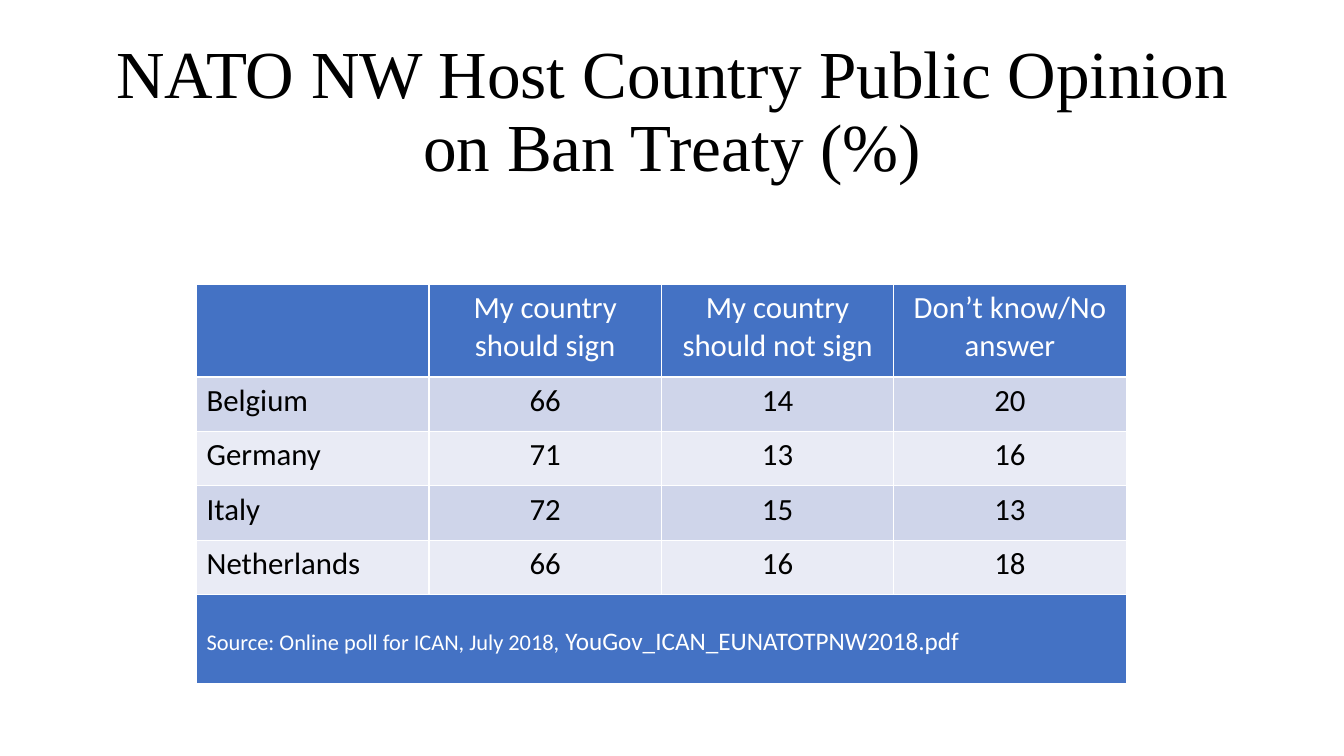
from lxml.etree import SubElement
from pptx import Presentation
from pptx.dml.color import RGBColor
from pptx.enum.text import MSO_ANCHOR, PP_ALIGN
from pptx.oxml.ns import qn
from pptx.util import Inches, Pt

BLUE, WHITE, BLACK = "4472C4", "FFFFFF", "000000"
BANDS = ["CFD5EA", "E9EBF5"]
HEADINGS = ["", "My country should sign", "My country should not sign", "Don’t know/No answer"]
OPINIONS = [
    ("Belgium", 66, 14, 20),
    ("Germany", 71, 13, 16),
    ("Italy", 72, 15, 13),
    ("Netherlands", 66, 16, 18),
]
SOURCE = [("Source: Online poll for ICAN, July 2018,", 16), (" YouGov_ICAN_EUNATOTPNW2018.pdf", 18)]


def rgb(value):
    return RGBColor.from_string(value)


def write_text(frame, runs, font="Calibri", color=BLACK, align=PP_ALIGN.LEFT, spacing=1.0):
    frame.word_wrap = True
    paragraph = frame.paragraphs[0]
    paragraph.alignment = align
    paragraph.line_spacing = spacing
    for words, size in runs:
        run = paragraph.add_run()
        run.text = words
        run.font.name = font
        run.font.size = Pt(size)
        run.font.bold = False
        run.font.color.rgb = rgb(color)


def style_cell(cell, fill):
    properties = cell._tc.get_or_add_tcPr()
    for side in ("a:lnL", "a:lnR", "a:lnT", "a:lnB"):
        border = SubElement(properties, qn(side), w=str(Pt(1)))
        solid = SubElement(border, qn("a:solidFill"))
        SubElement(solid, qn("a:srgbClr"), val=WHITE)
    cell.fill.solid()
    cell.fill.fore_color.rgb = rgb(fill)


def add_title(slide, left, top, width, height):
    title = slide.shapes.add_textbox(Inches(left), Inches(top), Inches(width), Inches(height))
    title.text_frame.vertical_anchor = MSO_ANCHOR.MIDDLE
    write_text(title.text_frame, [("NATO NW Host Country Public Opinion on Ban Treaty (%)", 48)],
               font="Times New Roman", align=PP_ALIGN.CENTER, spacing=0.9)


def add_opinion_table(slide, left, top, width, height):
    rows = [HEADINGS, *OPINIONS]
    header_height, source_height = 0.92, 0.88
    band_height = (height - header_height - source_height) / len(OPINIONS)
    heights = [header_height] + [band_height] * len(OPINIONS) + [source_height]
    table = slide.shapes.add_table(len(heights), len(HEADINGS), Inches(left), Inches(top),
                                   Inches(width), Inches(height)).table
    for column in table.columns:
        column.width = Inches(width / len(HEADINGS))
    for row, row_height in zip(table.rows, heights):
        row.height = Inches(row_height)

    for r, values in enumerate(rows):
        for c, value in enumerate(values):
            cell = table.cell(r, c)
            style_cell(cell, BANDS[(r - 1) % 2] if r else BLUE)
            if value != "":
                write_text(cell.text_frame, [(str(value), 22)], color=BLACK if r else WHITE,
                           align=PP_ALIGN.CENTER if c else PP_ALIGN.LEFT)

    last = len(heights) - 1
    source = table.cell(last, 0)
    source.merge(table.cell(last, len(HEADINGS) - 1))
    for c in range(len(HEADINGS)):
        style_cell(table.cell(last, c), BLUE)
    source.margin_top = Inches(0.32)
    write_text(source.text_frame, SOURCE, color=WHITE)


def main():
    deck = Presentation()
    deck.slide_width, deck.slide_height = Inches(13.33), Inches(7.5)
    slide = deck.slides.add_slide(deck.slide_layouts[6])
    add_title(slide, 0.92, 0.4, 11.5, 1.45)
    add_opinion_table(slide, 1.95, 2.82, 9.22, 3.96)
    deck.save("out.pptx")


if __name__ == "__main__":
    main()
